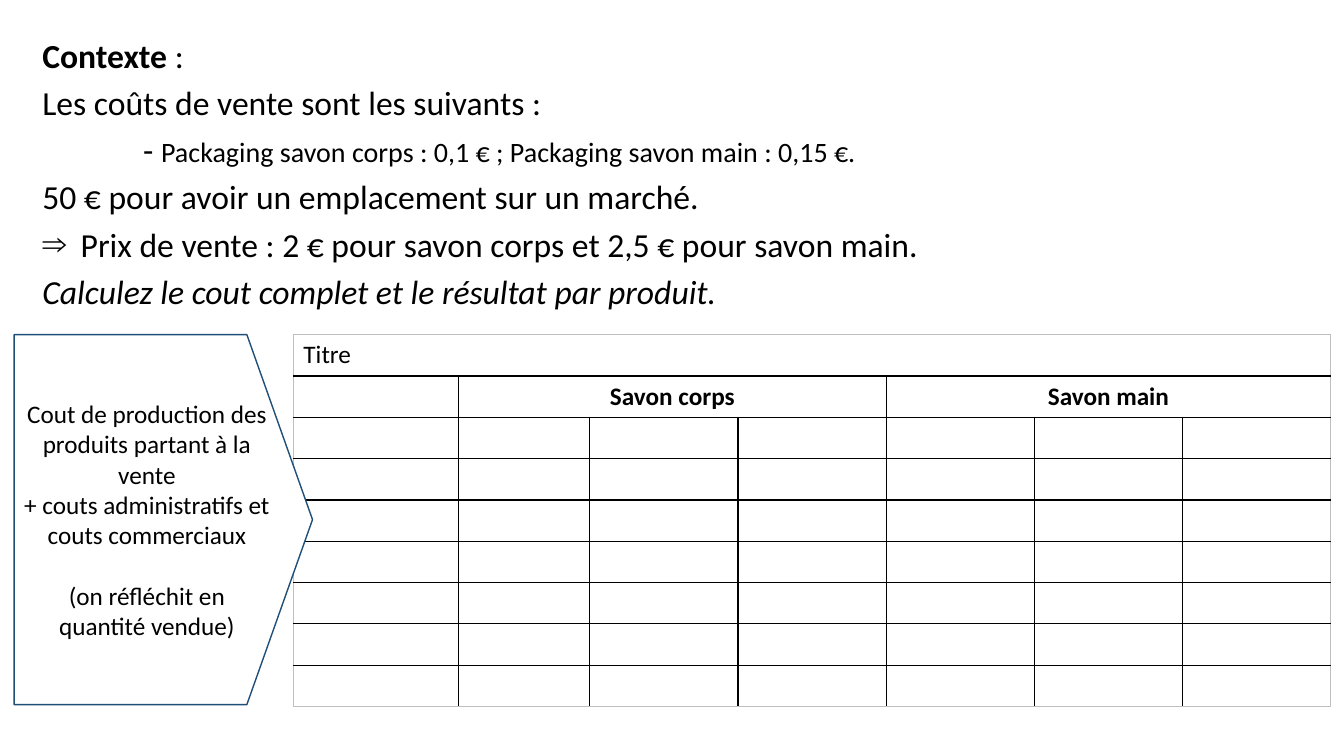
from dataclasses import dataclass
from typing import Any

from lxml import etree
from pptx import Presentation
from pptx import util as u
from pptx.dml.color import RGBColor
from pptx.enum import shapes, text
from pptx.oxml import ns

BLACK = RGBColor(0x00, 0x00, 0x00)
WHITE = RGBColor(0xFF, 0xFF, 0xFF)
NAVY = RGBColor(0x1F, 0x4E, 0x79)
GREY = RGBColor(0xBF, 0xBF, 0xBF)
FONT = "Calibri"


@dataclass(frozen=True)
class Span:
    words: str
    size: float = 24
    bold: bool = False
    italic: bool = False


@dataclass(frozen=True)
class Statement:
    spans: tuple[Span, ...]
    margin: float = 0
    indent: float = 0
    bullet: str = ""


@dataclass(frozen=True)
class Heading:
    row: int
    column: int
    width: int
    span: Span
    align: Any = text.PP_ALIGN.CENTER


CONTEXT = (
    Statement((Span("Contexte ", bold=True), Span(":"))),
    Statement((Span("Les coûts de vente sont les suivants :"),)),
    Statement((Span("- "), Span("Packaging savon corps : 0,1 € ; Packaging savon main : 0,15 €.", 20)), margin=1),
    Statement((Span("50 € pour avoir un emplacement sur un marché."),)),
    Statement((Span("Prix de vente : 2 € pour savon corps et 2,5 € pour savon main."),), 0.38, -0.38, "⇒"),
    Statement((Span("Calculez le cout complet et le résultat par produit.", italic=True),)),
)
HEADINGS = (
    Heading(0, 0, 7, Span("Titre", 18), text.PP_ALIGN.LEFT),
    Heading(1, 1, 3, Span("Savon corps", 18, bold=True)),
    Heading(1, 4, 3, Span("Savon main", 18, bold=True)),
)
REMINDERS = (
    ("Cout de production des produits partant à la vente", 0),
    ("+ couts administratifs et couts commerciaux", 0),
    ("(on réfléchit en quantité vendue)", 22),
)
COLUMN_WIDTHS = (1.64, 1.3) + (1.47,) * 5
ROW_COUNT = 9
ROW_HEIGHT = 0.41


def write(paragraph: Any, span: Span) -> None:
    run = paragraph.add_run()
    run.text = span.words
    style = {"name": FONT, "size": u.Pt(span.size), "bold": span.bold, "italic": span.italic}
    for attribute, value in style.items():
        setattr(run.font, attribute, value)
    run.font.color.rgb = BLACK


def paragraph_at(frame: Any, index: int) -> Any:
    return frame.add_paragraph() if index else frame.paragraphs[0]


def add_context(slide: Any) -> None:
    title = slide.shapes.title
    title.element.getparent().remove(title.element)
    context = slide.placeholders[1]
    place = {"left": 0.32, "top": 0.3, "width": 12.7, "height": 4.95}
    for attribute, value in place.items():
        setattr(context, attribute, u.Inches(value))
    frame = context.text_frame
    frame.word_wrap = True
    frame.auto_size = text.MSO_AUTO_SIZE.NONE
    for index, statement in enumerate(CONTEXT):
        paragraph = paragraph_at(frame, index)
        properties = paragraph._p.get_or_add_pPr()
        properties.set("marL", str(u.Inches(statement.margin)))
        properties.set("indent", str(u.Inches(statement.indent)))
        mark = etree.SubElement(properties, ns.qn("a:buChar" if statement.bullet else "a:buNone"))
        if statement.bullet:
            mark.set("char", statement.bullet)
        for span in statement.spans:
            write(paragraph, span)


def border(cell: Any, side: str, colour: RGBColor) -> None:
    line = etree.SubElement(cell._tc.get_or_add_tcPr(), ns.qn(f"a:{side}"), w=str(u.Pt(1)))
    fill = etree.SubElement(line, ns.qn("a:solidFill"))
    etree.SubElement(fill, ns.qn("a:srgbClr"), val=str(colour))


def edge_colour(edge: int, last: int) -> RGBColor:
    return GREY if edge in (0, last) else BLACK


def add_cost_table(slide: Any) -> None:
    columns = len(COLUMN_WIDTHS)
    table = slide.shapes.add_table(
        ROW_COUNT, columns, u.Inches(2.91), u.Inches(3.32),
        u.Inches(sum(COLUMN_WIDTHS)), u.Inches(ROW_COUNT * ROW_HEIGHT),
    ).table
    table.first_row = table.horz_banding = False
    for column, width in zip(table.columns, COLUMN_WIDTHS):
        column.width = u.Inches(width)
    for row in table.rows:
        row.height = u.Inches(ROW_HEIGHT)
    for heading in HEADINGS:
        cell = table.cell(heading.row, heading.column)
        cell.merge(table.cell(heading.row, heading.column + heading.width - 1))
        paragraph = cell.text_frame.paragraphs[0]
        paragraph.alignment = heading.align
        write(paragraph, heading.span)
    for row in range(ROW_COUNT):
        for column in range(columns):
            cell = table.cell(row, column)
            if not cell.is_spanned:
                width = cell.span_width if cell.is_merge_origin else 1
                border(cell, "lnL", edge_colour(column, columns))
                border(cell, "lnR", edge_colour(column + width, columns))
            border(cell, "lnT", edge_colour(row, ROW_COUNT))
            border(cell, "lnB", edge_colour(row + 1, ROW_COUNT))
            cell.fill.solid()
            cell.fill.fore_color.rgb = WHITE


def add_reminder(slide: Any) -> None:
    reminder = slide.shapes.add_shape(
        shapes.MSO_SHAPE.PENTAGON, u.Inches(0.14), u.Inches(3.32), u.Inches(2.96), u.Inches(3.67)
    )
    reminder.adjustments[0] = 0.22
    reminder.shadow.inherit = False
    reminder.fill.solid()
    reminder.fill.fore_color.rgb = WHITE
    reminder.line.color.rgb = NAVY
    reminder.line.width = u.Pt(1)
    frame = reminder.text_frame
    frame.word_wrap = True
    frame.vertical_anchor = text.MSO_ANCHOR.MIDDLE
    for index, (words, gap) in enumerate(REMINDERS):
        paragraph = paragraph_at(frame, index)
        paragraph.alignment = text.PP_ALIGN.CENTER
        paragraph.space_before = u.Pt(gap)
        write(paragraph, Span(words, 18))


def main() -> None:
    deck = Presentation()
    deck.slide_width = u.Inches(13.33)
    deck.slide_height = u.Inches(7.5)
    slide = deck.slides.add_slide(deck.slide_layouts[1])
    add_context(slide)
    add_cost_table(slide)
    add_reminder(slide)
    deck.save("out.pptx")


if __name__ == "__main__":
    main()
